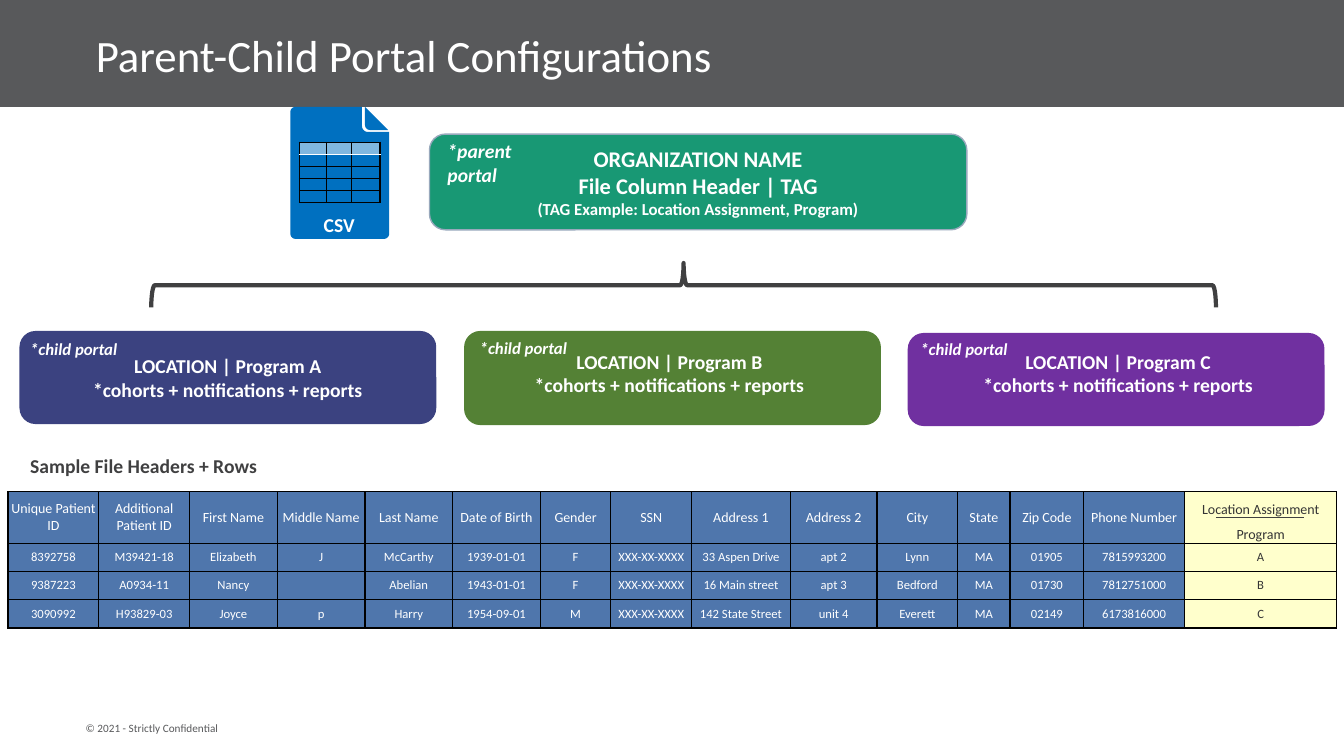
import math

from lxml import etree
from pptx import Presentation, util as u
from pptx.dml.color import RGBColor
from pptx.enum import shapes, text
from pptx.oxml.ns import qn

PX = 9144  # EMU per px, at 100 px to the inch
FONT = "Calibri"
COLORS = {
    "white": "FFFFFF", "black": "000000", "band": "58595B", "ink": "404041",
    "parent": "189874", "parent_line": "98A8BC", "navy": "3B4280",
    "green": "548135", "purple": "7030A0", "file": "0070C0",
    "cell": "4F76AC", "tag_cell": "FFFFCC", "tag_text": "353535",
}
LEFT, CENTER = text.PP_ALIGN.LEFT, text.PP_ALIGN.CENTER
TOP, MIDDLE, BOTTOM = (text.MSO_ANCHOR.TOP, text.MSO_ANCHOR.MIDDLE,
                       text.MSO_ANCHOR.BOTTOM)
RECT, ROUNDED = shapes.MSO_SHAPE.RECTANGLE, shapes.MSO_SHAPE.ROUNDED_RECTANGLE

COLUMNS = [90, 90, 87, 87, 87, 87, 70, 80, 98, 86, 80, 52, 73, 100, 151]
RECORDS = [
    ["Unique Patient ID", "Additional Patient ID", "First Name", "Middle Name",
     "Last Name", "Date of Birth", "Gender", "SSN", "Address 1", "Address 2",
     "City", "State", "Zip Code", "Phone Number", "Location Assignment\nProgram"],
    ["8392758", "M39421-18", "Elizabeth", "J", "McCarthy", "1939-01-01", "F",
     "XXX-XX-XXXX", "33 Aspen Drive", "apt 2", "Lynn", "MA", "01905",
     "7815993200", "A"],
    ["9387223", "A0934-11", "Nancy", "", "Abelian", "1943-01-01", "F",
     "XXX-XX-XXXX", "16 Main street", "apt 3", "Bedford", "MA", "01730",
     "7812751000", "B"],
    ["3090992", "H93829-03", "Joyce", "p", "Harry", "1954-09-01", "M",
     "XXX-XX-XXXX", "142 State Street", "unit 4", "Everett", "MA", "02149",
     "6173816000", "C"],
]


def rgb(name):
    return RGBColor.from_string(COLORS[name])


def emu(box):
    return [u.Emu(round(length * PX)) for length in box]


def write(frame, lines, sizes, color="white", align=CENTER, spacing=None, **style):
    """Fill a text frame or cell frame; sizes holds one point size per line."""
    for i, (line, size) in enumerate(zip(lines, sizes)):
        para = frame.paragraphs[0] if i == 0 else frame.add_paragraph()
        para.alignment = align
        if spacing:
            para.line_spacing = spacing
        if not line:
            etree.SubElement(para._p, qn("a:endParaRPr"), sz=str(size * 100))
            continue
        span = para.add_run()
        span.text = line
        span.font.color.rgb = rgb(color)
        for key, value in {"name": FONT, "size": u.Pt(size), **style}.items():
            setattr(span.font, key, value)


def set_frame(frame, anchor=TOP, pad=5):
    settings = {"word_wrap": True, "auto_size": text.MSO_AUTO_SIZE.NONE,
                "vertical_anchor": anchor,
                "margin_top": pad * PX, "margin_bottom": pad * PX,
                "margin_left": 10 * PX, "margin_right": 10 * PX}
    for key, value in settings.items():
        setattr(frame, key, value)
    return frame


def add_label(page, box, lines, sizes, **style):
    frame = set_frame(page.shapes.add_textbox(*emu(box)).text_frame)
    write(frame, lines, sizes, **style)


def add_panel(page, kind, box, fill=None, line=None, width=1):
    panel = page.shapes.add_shape(kind, *emu(box))
    panel.shadow.inherit = False
    if fill:
        panel.fill.solid()
        panel.fill.fore_color.rgb = rgb(fill)
    else:
        panel.fill.background()
    if line:
        panel.line.color.rgb = rgb(line)
        panel.line.width = u.Pt(width)
    else:
        panel.line.fill.background()
    return panel


def add_grid(page, left, top, widths, heights):
    frame = page.shapes.add_table(len(heights), len(widths), *emu(
        (left, top, sum(widths), sum(heights))))
    grid = frame.table
    grid.first_row = grid.horz_banding = False
    for column, width in zip(grid.columns, widths):
        column.width = u.Emu(width * PX)
    for row, height in zip(grid.rows, heights):
        row.height = u.Emu(height * PX)
    return grid


def format_cell(cell, fill=None, alpha=None, anchor=MIDDLE, **edges):
    """Borders are black unless edges names another colour for L, R, T or B."""
    cell.vertical_anchor = anchor
    for side in ("left", "right", "top", "bottom"):
        setattr(cell, "margin_" + side, 0)
    props = cell._tc.get_or_add_tcPr()
    for side in "LRTB":
        edge = etree.SubElement(props, qn("a:ln" + side), w="12700")
        solid = etree.SubElement(edge, qn("a:solidFill"))
        etree.SubElement(solid, qn("a:srgbClr"), val=COLORS[edges.get(side, "black")])
    if not fill:
        cell.fill.background()
        return
    cell.fill.solid()
    cell.fill.fore_color.rgb = rgb(fill)
    if alpha:
        color = props.find(qn("a:solidFill")).find(qn("a:srgbClr"))
        etree.SubElement(color, qn("a:alpha"), val=str(alpha * 1000))


def add_header(page, box):
    band = add_panel(page, RECT, box, "band")
    page.shapes._spTree.insert(2, band._element)  # behind the title
    title = page.shapes.title
    title.left, title.top, title.width, title.height = emu((85, 8, 1162, 99))
    write(set_frame(title.text_frame, MIDDLE), ["Parent-Child Portal Configurations"],
          [32], align=LEFT, spacing=0.9)


def add_parent(page, box):
    left, top = box[:2]
    panel = add_panel(page, ROUNDED, box, "parent", "parent_line")
    write(set_frame(panel.text_frame, MIDDLE),
          ["ORGANIZATION NAME", "File Column Header | TAG",
           "(TAG Example: Location Assignment, Program)"], [16, 16, 12], bold=True)
    add_label(page, (left + 8, top, 110, 58), ["*parent portal"], [14],
              align=LEFT, bold=True, italic=True)


def add_child(page, box, color, letter, tag, heading=None):
    """tag and heading are offsets from the panel's corner."""
    left, top = box[:2]
    panel = add_panel(page, ROUNDED, box, color, color)
    lines = ["LOCATION | Program " + letter, "*cohorts + notifications + reports"]
    if heading:
        add_label(page, (left + heading[0], top + heading[1], 302, 57),
                  lines, [14, 14], bold=True)
    else:
        write(set_frame(panel.text_frame, MIDDLE), lines, [14, 14], bold=True)
    add_label(page, (left + tag[0], top + tag[1], 120, 30), ["*child portal"], [12],
              align=LEFT, bold=True, italic=True)


def add_brace(page, box):
    left, top, width, height = box
    upright = (left + (width - height) / 2, top + (height - width) / 2, height, width)
    brace = add_panel(page, shapes.MSO_SHAPE.LEFT_BRACE, upright, line="ink", width=3)
    brace.rotation = 90
    brace.adjustments[0], brace.adjustments[1] = 0.08, 0.5


def add_records(page, left, top):
    grid = add_grid(page, left, top, COLUMNS, [51, 28, 28, 28])
    for r, record in enumerate(RECORDS):
        for c, value in enumerate(record):
            cell, tagged = grid.cell(r, c), c == len(COLUMNS) - 1
            lines = value.split("\n")
            write(cell.text_frame, lines, [9 if r else 10] * len(lines),
                  "tag_text" if tagged else "white",
                  spacing=1.5 if len(lines) > 1 else None)
            format_cell(cell, "tag_cell" if tagged else "cell",
                        anchor=BOTTOM if len(lines) > 1 else MIDDLE)
    # Rule between the two tag names
    rule = page.shapes.add_connector(shapes.MSO_CONNECTOR.STRAIGHT, *emu(
        (left + 1198, top + 25, left + 1285, top + 25)))
    rule.line.color.rgb = rgb("ink")
    rule.line.width = u.Pt(0.75)
    etree.SubElement(rule._element.spPr, qn("a:effectLst"))


def add_file_icon(page, left, top):
    def arc(x, y, radius, start, turn=90):
        angles = [math.radians(start + turn * k / 6) for k in range(7)]
        return [(x + radius * math.cos(a), y + radius * math.sin(a)) for a in angles]

    fold = [(74, 0), (97, 23), *arc(79, 18, 5, 90)]
    sheet = [(71, 0), *arc(77, 19, 6, 180, -90), (98, 25), *arc(93, 126, 5, 0),
             *arc(5, 126, 5, 90), *arc(5, 5, 5, 180)]
    fold, sheet = [[((left + x) * 10, (top + y) * 10) for x, y in outline]
                   for outline in (fold, sheet)]
    builder = page.shapes.build_freeform(*fold[0], scale=PX / 10)
    builder.add_line_segments(fold[1:], close=True)
    builder.move_to(*sheet[0])
    builder.add_line_segments(sheet[1:], close=True)
    icon = builder.convert_to_shape()
    icon.shadow.inherit = False
    icon.fill.solid()
    icon.fill.fore_color.rgb = rgb("file")
    icon.line.fill.background()

    name = add_panel(page, RECT, (left + 17, top + 102, 63, 25), "file")
    write(set_frame(name.text_frame, pad=0), ["CSV"], [14], spacing=1.14, bold=True)

    grid = add_grid(page, left + 9, top + 35, [27, 25, 28], [12] * 5)
    for r in range(5):
        for c in range(3):
            cell = grid.cell(r, c)
            write(cell.text_frame, [""], [1])
            if r == 0:
                format_cell(cell, "white", 50, B="white")
            else:
                format_cell(cell, T="white" if r == 1 else "black")


def main():
    deck = Presentation()
    deck.slide_width, deck.slide_height = emu((1333, 750))
    page = deck.slides.add_slide(deck.slide_layouts[5])
    add_header(page, (0, 0, 1333, 106))
    # Portals
    add_parent(page, (426, 133, 533, 95))
    add_brace(page, (150, 261, 1056, 44))
    add_child(page, (20, 329, 412, 91), "navy", "A", (0, 2))
    add_child(page, (461, 329, 412, 92), "green", "B", (5, 1), (52, 13))
    add_child(page, (901, 331, 412, 91), "purple", "C", (2, 0), (57, 11))
    # Sample file
    add_label(page, (20, 445, 461, 34), ["Sample File Headers + Rows"], [14],
              color="ink", align=LEFT, bold=True)
    add_records(page, 8, 488)
    add_file_icon(page, 288, 106)
    add_label(page, (75, 711, 312, 24), ["© 2021 - Strictly Confidential"], [8],
              color="band", align=LEFT)
    deck.save("out.pptx")


if __name__ == "__main__":
    main()
